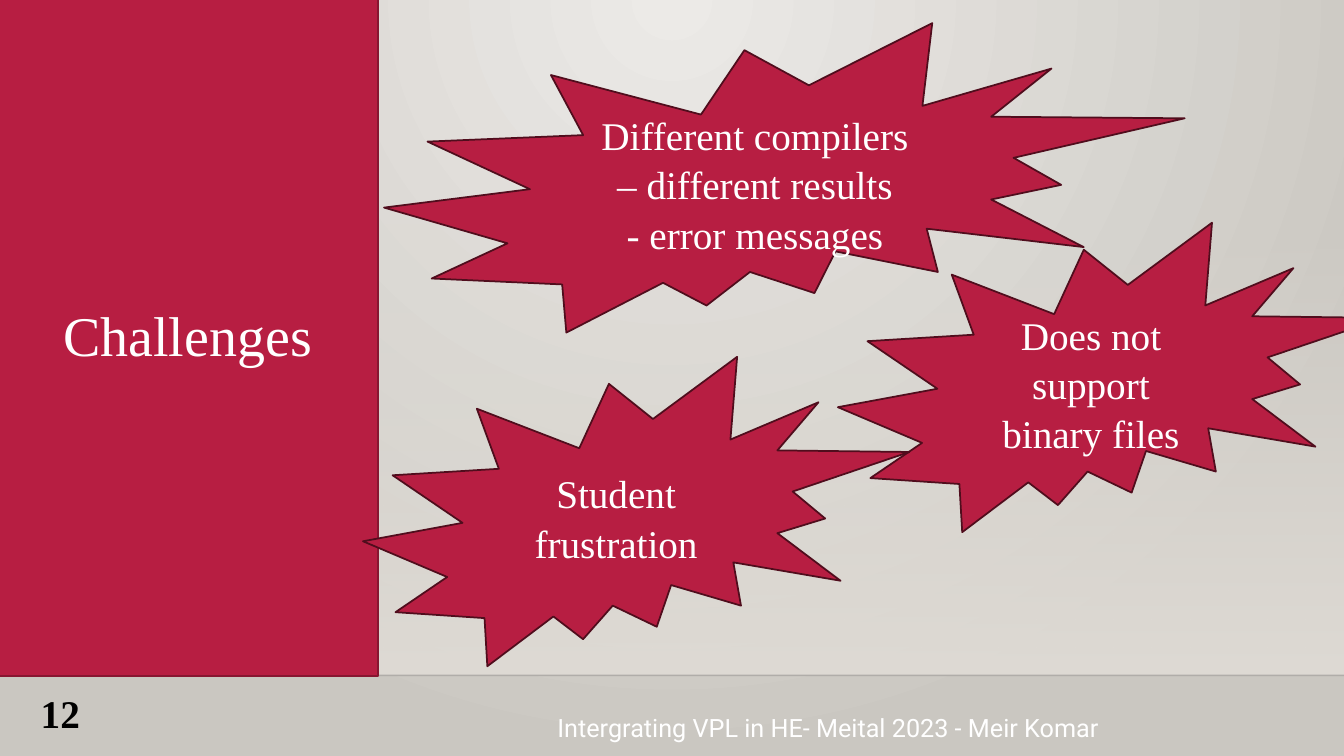
from lxml import etree
from pptx import Presentation
from pptx.dml.color import RGBColor
from pptx.enum.shapes import MSO_CONNECTOR, MSO_SHAPE
from pptx.enum.text import MSO_ANCHOR, PP_ALIGN
from pptx.oxml.ns import qn
from pptx.util import Pt

PX = 9144  # EMU per px, 100 px to the inch
WIDTH, HEIGHT = 1333, 750
FLOOR_Y = 670

CRIMSON = RGBColor(0xB7, 0x1E, 0x42)
PANEL_EDGE = RGBColor(0x87, 0x16, 0x31)
BURST_EDGE = RGBColor(0x50, 0x0D, 0x1D)
PALE = RGBColor(0xEC, 0xEA, 0xE7)
GREY = RGBColor(0xCA, 0xC7, 0xC1)
SAND = RGBColor(0xDF, 0xDB, 0xD5)
WHITE = RGBColor(0xFF, 0xFF, 0xFF)
BLACK = RGBColor(0, 0, 0)
NEAR_BLACK = RGBColor(0, 0, 1)

SERIF = dict(name="Times New Roman")
BURST_FONT = dict(SERIF, size=Pt(28))
BURSTS = [
    ((831, 221, 542, 307), ["Does not support binary files"]),
    ((381, 23, 794, 307), ["Different compilers – different results", "- error messages"]),
    ((360, 354, 542, 307), ["Student frustration"]),
]


def emu(box):
    return [v * PX for v in box]


def set_alpha(color_element, percent):
    etree.SubElement(color_element, qn("a:alpha"), val=str(percent * 1000))


def set_stops(fill, colors):
    fill.gradient()
    for stop, color in zip(fill.gradient_stops, colors):
        stop.color.rgb = color


def write(shape, lines, font, color=WHITE, align=PP_ALIGN.CENTER,
          anchor=MSO_ANCHOR.MIDDLE, spacing=None):
    tf = shape.text_frame
    tf.word_wrap = True
    tf.vertical_anchor = anchor
    for i, line in enumerate(lines):
        p = tf.add_paragraph() if i else tf.paragraphs[0]
        p.alignment = align
        p.line_spacing = spacing
        r = p.add_run()
        r.text = line
        for key, value in font.items():
            setattr(r.font, key, value)
        r.font.color.rgb = color


def add_filled(s, kind, box, edge):
    shape = s.shapes.add_shape(kind, *emu(box))
    shape.shadow.inherit = False
    shape.fill.solid()
    shape.fill.fore_color.rgb = CRIMSON
    shape.line.color.rgb = edge
    shape.line.width = Pt(1.25)
    return shape


def add_backdrop(s):
    """Radial background, a wash fading in downwards, and the floor line."""
    set_stops(s.background.fill, (PALE, GREY))
    grad = next(s.element.iter(qn("a:gradFill")))
    grad.remove(grad.find(qn("a:lin")))
    glow = etree.SubElement(grad, qn("a:path"), {"path": "circle"})
    etree.SubElement(glow, qn("a:fillToRect"), l="43000", t="0", r="43000", b="100000")

    wash = s.shapes.add_shape(MSO_SHAPE.RECTANGLE, *emu((0, 221, WIDTH, FLOOR_Y - 221)))
    wash.shadow.inherit = False
    wash.line.fill.background()
    set_stops(wash.fill, (SAND, SAND))
    wash.fill.gradient_angle = 270
    set_alpha(next(wash.element.iter(qn("a:srgbClr"))), 0)

    floor = s.shapes.add_connector(MSO_CONNECTOR.STRAIGHT, *emu((0, FLOOR_Y, WIDTH, FLOOR_Y)))
    floor.line.color.rgb = NEAR_BLACK
    floor.line.width = Pt(1)
    set_alpha(next(floor.element.iter(qn("a:srgbClr"))), 20)
    etree.SubElement(floor.element.spPr, qn("a:effectLst"))


def add_title_panel(s, box, title):
    panel = add_filled(s, MSO_SHAPE.RECTANGLE, box, PANEL_EDGE)
    write(panel, [title], dict(SERIF, size=Pt(40)))


def add_footer(s, top, text, number):
    note = s.shapes.add_textbox(*emu((543, top + 36, 872, 31)))
    write(note, [text], dict(name="Roboto", size=Pt(18)), align=PP_ALIGN.LEFT)
    page = s.shapes.add_textbox(*emu((0, top + 9, 89, 55)))
    write(page, [number], dict(SERIF, size=Pt(28), bold=True), BLACK,
          PP_ALIGN.RIGHT, MSO_ANCHOR.TOP)


def add_burst(s, box, lines):
    burst = add_filled(s, MSO_SHAPE.EXPLOSION2, box, BURST_EDGE)
    write(burst, lines, BURST_FONT, spacing=1.05)


def main():
    prs = Presentation()
    prs.slide_width, prs.slide_height = emu((WIDTH, HEIGHT))
    s = prs.slides.add_slide(prs.slide_layouts[6])
    add_backdrop(s)
    add_title_panel(s, (-3, -9, 378, 680), "Challenges")
    add_footer(s, FLOOR_Y, "Intergrating VPL in HE- Meital 2023 - Meir Komar", "12")
    for box, lines in BURSTS:
        add_burst(s, box, lines)
    prs.save("out.pptx")


if __name__ == "__main__":
    main()
